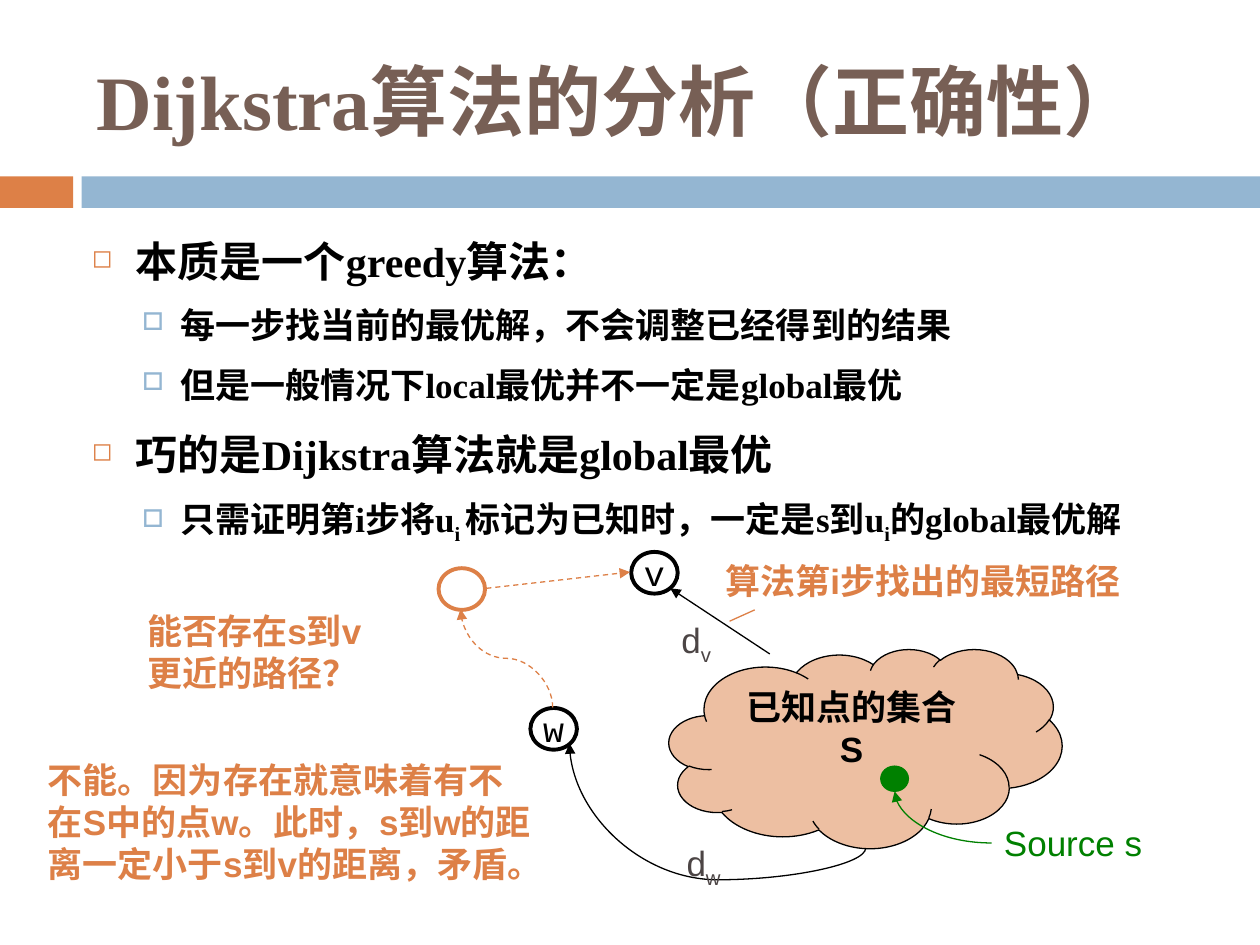
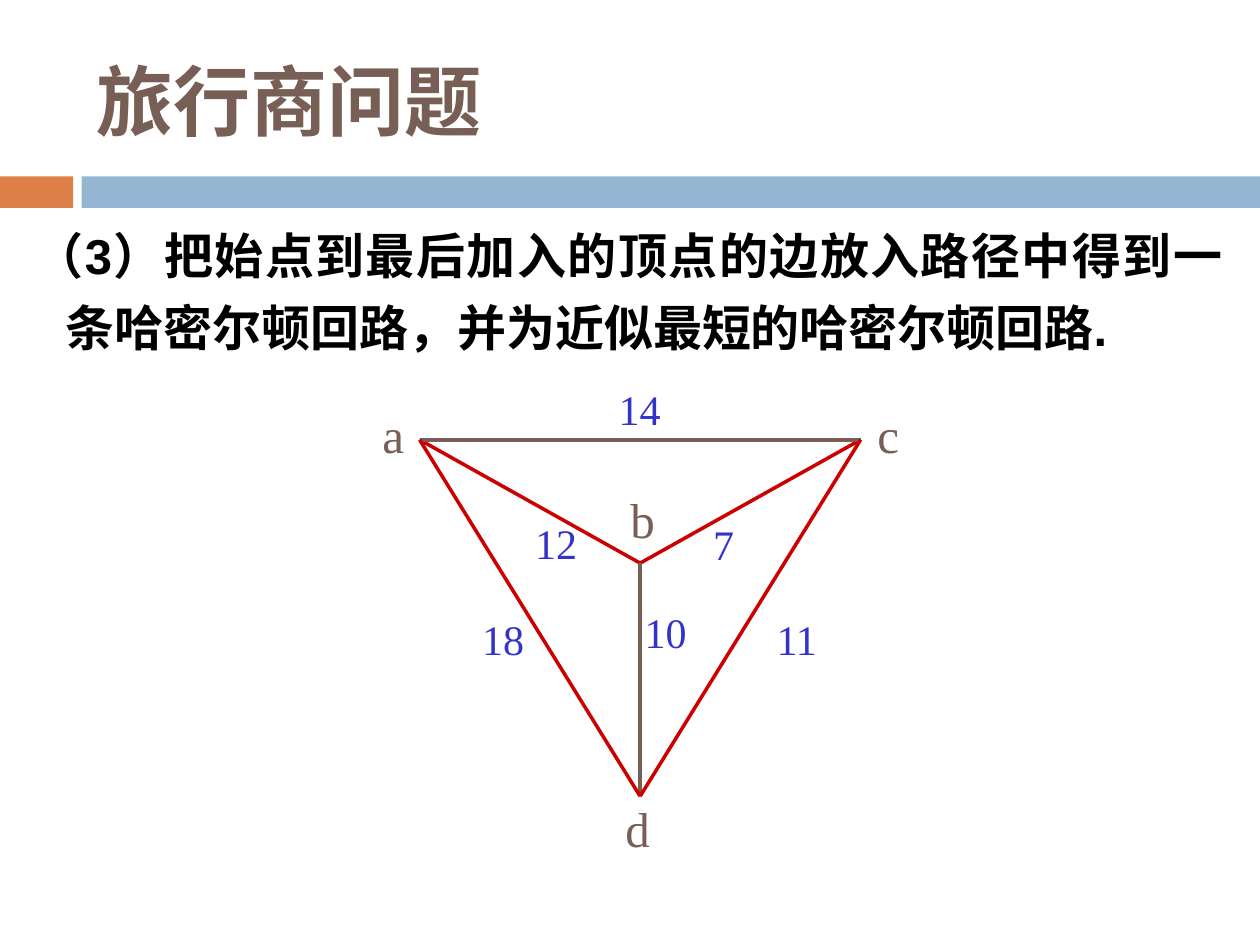
"""Build two lecture slides: Dijkstra correctness and the travelling salesman."""
import lxml.etree
import pptx
import pptx.dml.color
import pptx.enum.dml
import pptx.enum.shapes
import pptx.enum.text
import pptx.oxml.ns
import pptx.util

Pt = pptx.util.Pt
SHAPES = pptx.enum.shapes.MSO_SHAPE
CONNECTORS = pptx.enum.shapes.MSO_CONNECTOR
ALIGN = pptx.enum.text.PP_ALIGN
MIDDLE = pptx.enum.text.MSO_ANCHOR.MIDDLE

COLORS = {"orange": "DD8047", "blue": "94B6D2", "brown": "775F55",
          "black": "000000", "white": "FFFFFF", "green": "008000",
          "gray": "4C4545", "weight": "3333CC", "tour": "CC0000"}

TITLE = {"name": "Times New Roman", "size": Pt(44), "bold": True}
BODY = {"name": "Times New Roman", "size": Pt(24), "bold": True}
NOTE = {"name": "Arial", "size": Pt(20), "bold": True}
LABEL = {"name": "Arial", "size": Pt(20), "bold": False}
NODE = {"name": "Courier New", "size": Pt(20), "bold": False}
STEP = {"name": "Arial", "size": Pt(28), "bold": True}
VERTEX = {"name": "Times New Roman", "size": Pt(28), "bold": False}
WEIGHT = {"name": "Times New Roman", "size": Pt(24), "bold": False}
SUBSCRIPT = -25000

BULLETS = [
    {"format": {"line_spacing": 1.2, "space_before": Pt(7)}, "size": Pt(24),
     "margin": 25.2, "hanging": 25.2, "sign": "◻", "color": "orange", "percent": 60},
    {"format": {"line_spacing": 1.2, "space_before": Pt(5.5)}, "size": Pt(20),
     "margin": 50.4, "hanging": 21.6, "sign": "□", "color": "blue", "percent": 70},
]


def rgb(color):
    """Return the named colour as an RGB value."""
    return pptx.dml.color.RGBColor.from_string(COLORS[color])


def apply_format(target, values):
    """Set every attribute in a dict of format values."""
    for name, value in values.items():
        setattr(target, name, value)


def add_element(parent, tag, **attributes):
    """Append a drawing element with attributes to a parent."""
    element = lxml.etree.SubElement(parent, pptx.oxml.ns.qn(tag))
    for name, value in attributes.items():
        element.set(name, str(value))
    return element


def add_run(paragraph, text, style, color, baseline=0):
    """Add one formatted run to a paragraph."""
    run = paragraph.add_run()
    run.text = text
    apply_format(run.font, style)
    run.font.color.rgb = rgb(color)
    if baseline:
        run.font._element.set("baseline", str(baseline))


def set_indent(paragraph, margin, hanging):
    """Give a paragraph a hanging indent in points and return its properties."""
    properties = paragraph._p.get_or_add_pPr()
    properties.set("marL", str(Pt(margin)))
    properties.set("indent", str(-Pt(hanging)))
    return properties


def add_text(slide, box, text, style, color, subscript="", wrap=True, align=ALIGN.LEFT):
    """Add a text box with one paragraph and return the paragraph."""
    shape = slide.shapes.add_textbox(*map(Pt, box))
    shape.text_frame.word_wrap = wrap
    paragraph = shape.text_frame.paragraphs[0]
    paragraph.alignment = align
    if text:
        add_run(paragraph, text, style, color)
    if subscript:
        add_run(paragraph, subscript, style, color, SUBSCRIPT)
    return paragraph


def add_title(slide, runs):
    """Add the slide title from pairs of text and font name."""
    shape = slide.shapes.add_textbox(Pt(48.2), Pt(18), Pt(642.2), Pt(77.8))
    apply_format(shape.text_frame, {"word_wrap": True, "vertical_anchor": MIDDLE})
    for text, name in runs:
        add_run(shape.text_frame.paragraphs[0], text, {**TITLE, "name": name}, "brown")


def add_shape(slide, kind, box, fill=None, line=None, width=0.75):
    """Add a preset shape, with fill and line only where named."""
    shape = slide.shapes.add_shape(kind, *map(Pt, box))
    shape.shadow.inherit = False
    if fill:
        shape.fill.solid()
        shape.fill.fore_color.rgb = rgb(fill)
    else:
        shape.fill.background()
    if line:
        shape.line.color.rgb = rgb(line)
        shape.line.width = Pt(width)
    else:
        shape.line.fill.background()
    return shape


def add_caption(shape, text, style, color, **frame_format):
    """Write centred text inside a shape."""
    apply_format(shape.text_frame, frame_format)
    paragraph = shape.text_frame.paragraphs[0]
    paragraph.alignment = ALIGN.CENTER
    add_run(paragraph, text, style, color)


def add_node(slide, left, top, text, line="black"):
    """Add a round graph node."""
    shape = add_shape(slide, SHAPES.OVAL, (left, top, 26.6, 23.8), "white", line, 2.25)
    if text:
        add_caption(shape, text, NODE, "black", word_wrap=False, vertical_anchor=MIDDLE)


def add_line(slide, start, end, color, width=0.75, arrow=False, dashed=False,
             kind=CONNECTORS.STRAIGHT):
    """Add a connector, with an arrowhead at its end if wanted."""
    connector = slide.shapes.add_connector(kind, *map(Pt, (*start, *end)))
    connector.line.color.rgb = rgb(color)
    connector.line.width = Pt(width)
    if dashed:
        connector.line.dash_style = pptx.enum.dml.MSO_LINE.DASH
    if arrow:
        add_element(connector.line._get_or_add_ln(), "a:tailEnd", type="triangle")
    add_element(connector._element.spPr, "a:effectLst")
    return connector


def add_curve(slide, box, color, turn, flip=None, adjust=None, dashed=False):
    """Add a curved arrow in a turned box; without adjust it is a single bend."""
    left, top, width, height = box
    connector = add_line(slide, (left, top), (left + width, top + height), color,
                         arrow=True, dashed=dashed, kind=CONNECTORS.CURVE)
    properties = connector._element.spPr
    frame = properties.find(pptx.oxml.ns.qn("a:xfrm"))
    frame.set("rot", str(turn * 60000))
    if flip:
        frame.set(flip, "1")
    geometry = properties.find(pptx.oxml.ns.qn("a:prstGeom"))
    if adjust is None:
        geometry.set("prst", "curvedConnector2")
    else:
        guides = geometry.find(pptx.oxml.ns.qn("a:avLst"))
        add_element(guides, "a:gd", name="adj1", fmla=f"val {adjust}")


def add_bullets(slide, box, items):
    """Add a bulleted list from levels and their runs."""
    frame = slide.shapes.add_textbox(*map(Pt, box)).text_frame
    frame.word_wrap = True
    for index, (level, runs) in enumerate(items):
        bullet = BULLETS[level]
        paragraph = frame.add_paragraph() if index else frame.paragraphs[0]
        apply_format(paragraph, {"level": level, **bullet["format"]})
        properties = set_indent(paragraph, bullet["margin"], bullet["hanging"])
        add_element(add_element(properties, "a:buClr"), "a:srgbClr",
                    val=COLORS[bullet["color"]])
        add_element(properties, "a:buSzPct", val=bullet["percent"] * 1000)
        add_element(properties, "a:buChar", char=bullet["sign"])
        for text, baseline in runs:
            add_run(paragraph, text, {**BODY, "size": bullet["size"]}, "black", baseline)


def add_base_slide(presentation, title_runs):
    """Add a blank slide with the two bands and a title."""
    slide = presentation.slides.add_slide(presentation.slide_layouts[6])
    for left, width, color in ((0, 41.8, "orange"), (46.6, 673.4, "blue")):
        add_shape(slide, SHAPES.RECTANGLE, (left, 100.8, width, 18), color)
    add_title(slide, title_runs)
    return slide


def add_known_set(slide):
    """Add the cloud of known vertices and the source point."""
    cloud = add_shape(slide, SHAPES.CLOUD, (382.3, 370.8, 224.6, 113.8), "orange", "black")
    color = cloud._element.spPr.find(".//" + pptx.oxml.ns.qn("a:srgbClr"))
    add_element(color, "a:alpha", val=50000)
    add_caption(cloud, "已知点的集合S", NOTE, "black", word_wrap=True,
                vertical_anchor=pptx.enum.text.MSO_ANCHOR.TOP)
    add_shape(slide, SHAPES.OVAL, (503.3, 437.8, 15.8, 14.4), "green", "green")


def build_correctness(presentation):
    """Build the slide on the correctness of Dijkstra's algorithm."""
    slide = add_base_slide(presentation, [("Dijkstra算法的", "Times New Roman"),
                                          ("分析（正确性）", "Calibri")])
    add_bullets(slide, (45.4, 125.3, 628.6, 362.9), [
        (0, [("本质是一个greedy算法：", 0)]),
        (1, [("每一步找当前的最优解，不会调整已经得到的结果", 0)]),
        (1, [("但是一般情况下local最优并不一定是global最优", 0)]),
        (0, [("巧的是Dijkstra算法就是global最优", 0)]),
        (1, [("只需证明第i步将u", 0), ("i ", SUBSCRIPT),
             ("标记为已知时，一定是s到u", 0), ("i", SUBSCRIPT),
             ("的global最优解", 0)]),
    ])
    add_known_set(slide)
    add_node(slide, 360.7, 315.4, "v")
    add_node(slide, 303.1, 404.6, "w")
    add_node(slide, 250.6, 324.7, "", "orange")

    add_line(slide, (439.9, 373.7), (383, 336.2), "black", arrow=True)
    add_line(slide, (277.9, 336.2), (360, 326.9), "orange", arrow=True, dashed=True)
    add_line(slide, (431.3, 348.5), (416.9, 355), "orange")
    add_curve(slide, (380.2, 370.1, 59.8, 169.2), "black", 90, "flipH", -30300)
    add_curve(slide, (261.4, 349.9, 56.2, 52.6), "orange", 270, "flipV", 50000, True)
    add_curve(slide, (511.2, 452.2, 55.4, 29.5), "green", 180)

    add_text(slide, (406.8, 316.1, 241.2, 31.7), "算法第i步找出的最短路径",
             NOTE, "orange", align=ALIGN.CENTER)
    add_text(slide, (77, 344.9, 139, 51.8), "能否存在s到v更近的路径？", NOTE, "orange")
    add_text(slide, (20.2, 429.8, 291.6, 87.1),
             "不能。因为存在就意味着有不在S中的点w。此时，s到w的距离一定小于s到v的距离，矛盾。",
             NOTE, "orange")
    add_text(slide, (566.6, 465.8, 94.3, 31.7), "Source s", LABEL, "green", wrap=False)
    add_text(slide, (382.3, 349.9, 32.4, 31.7), "d", LABEL, "gray", "v", wrap=False)
    add_text(slide, (385.2, 477.4, 35.3, 31.7), "d", LABEL, "gray", "w", wrap=False)


def build_salesman(presentation):
    """Build the slide on the travelling salesman problem."""
    slide = add_base_slide(presentation, [("旅行商问题", "Calibri")])
    paragraph = add_text(slide, (3.6, 113.8, 702, 156.2), " ",
                         {**STEP, "size": Pt(32)}, "orange", align=ALIGN.JUSTIFY)
    add_run(paragraph, "（3）把始点到最后加入的顶点的边放入路径中得到一条哈密尔顿回路，"
            "并为近似最短的哈密尔顿回路.", STEP, "black")
    apply_format(paragraph, {"line_spacing": 1.2, "space_before": Pt(5.6)})
    set_indent(paragraph, 27, 27)

    vertices = {"a": (239.8, 251.3), "b": (365.8, 321.8),
                "c": (491.8, 251.3), "d": (365.8, 455)}
    for edge, color in (("ab", "tour"), ("bc", "tour"), ("db", "brown"),
                        ("ac", "brown"), ("dc", "tour"), ("da", "tour")):
        add_line(slide, vertices[edge[0]], vertices[edge[1]], color, 2)

    vertex_labels = {"a": (203.8, 229.7), "b": (346.3, 278.6),
                     "c": (486.7, 229.7), "d": (343.4, 455)}
    weight_labels = {"18": (263.5, 347), "14": (341.5, 215.3), "11": (431.3, 347),
                     "10": (356.4, 342.7), "12": (293.8, 292.3), "7": (389.5, 293)}
    for labels, width, style, color in ((vertex_labels, 41.8, VERTEX, "brown"),
                                        (weight_labels, 48, WEIGHT, "weight")):
        for text, (left, top) in labels.items():
            callout = add_shape(slide, SHAPES.RECTANGULAR_CALLOUT, (left, top, width, 36))
            add_caption(callout, text, style, color, vertical_anchor=MIDDLE)


def main():
    """Build and save the presentation."""
    presentation = pptx.Presentation()
    apply_format(presentation, {"slide_width": Pt(720), "slide_height": Pt(540)})
    build_correctness(presentation)
    build_salesman(presentation)
    presentation.save("out.pptx")


if __name__ == "__main__":
    main()
